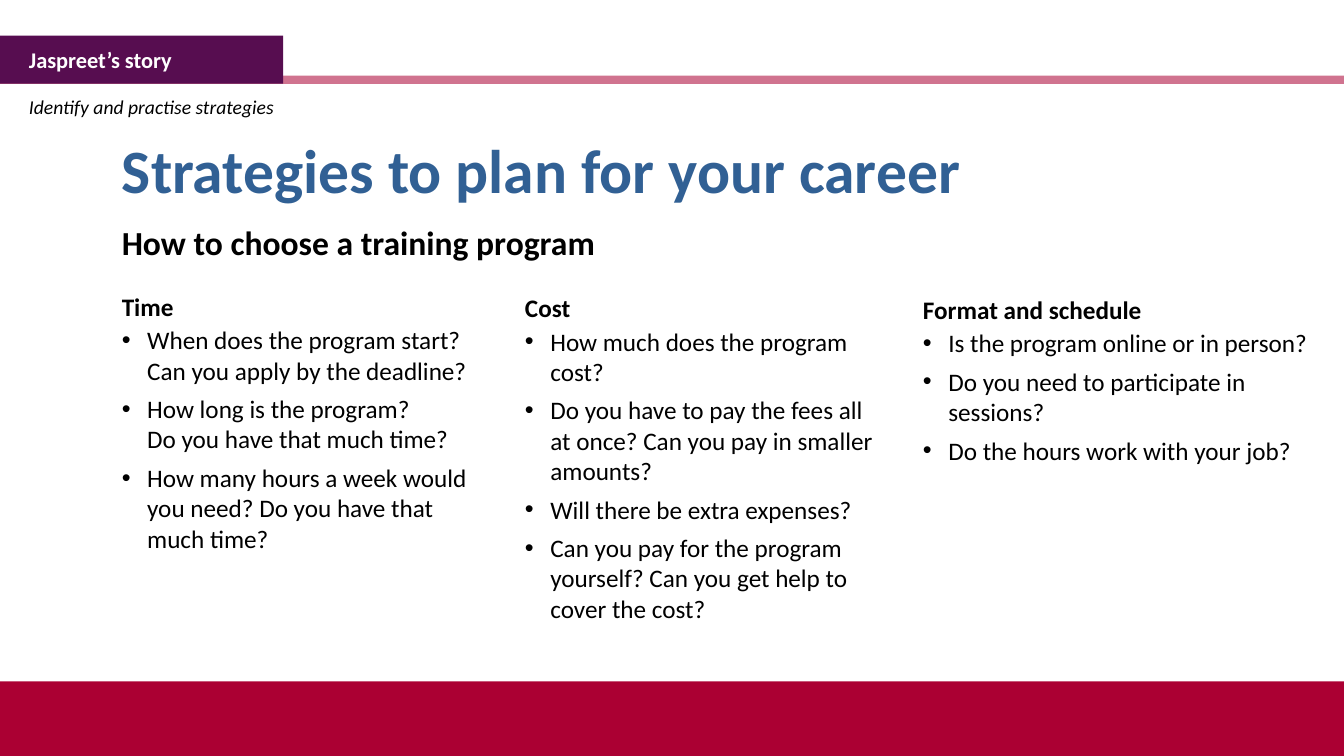
from lxml import etree
from pptx import Presentation
from pptx.dml.color import RGBColor
from pptx.enum.shapes import MSO_CONNECTOR, MSO_SHAPE
from pptx.enum.text import MSO_ANCHOR, MSO_AUTO_SIZE, PP_ALIGN
from pptx.oxml.ns import qn
from pptx.util import Cm, Pt

RECT = MSO_SHAPE.RECTANGLE
STRAIGHT = MSO_CONNECTOR.STRAIGHT
LEFT = PP_ALIGN.LEFT
TOP, MIDDLE = MSO_ANCHOR.TOP, MSO_ANCHOR.MIDDLE
GROW = MSO_AUTO_SIZE.SHAPE_TO_FIT_TEXT

WIDTH, HEIGHT = 33.87, 19.05
MARGIN = 2.82


def rgb(value):
    """Turn a hex string into a colour."""
    return RGBColor.from_string(value)


class Deck:
    """Holds the style and the current slide."""

    FONT = "Calibri"
    BLACK, WHITE = "000000", "FFFFFF"
    BLUE, CRIMSON, PURPLE = "316094", "AB0033", "570D50"

    def __init__(self, prs):
        """Add a title-only slide."""
        self.s = prs.slides.add_slide(prs.slide_layouts[5])

    def style(self, p, size, color=BLACK, bold=False, italic=False):
        """Format every run of a paragraph."""
        p.alignment = LEFT
        for r in p.runs:
            f = r.font
            f.name, f.size, f.bold, f.italic = self.FONT, Pt(size), bold, italic
            f.color.rgb = rgb(color)

    def indent(self, p, left, first=0):
        """Set the left margin and first-line indent of a paragraph."""
        pPr = p._p.get_or_add_pPr()
        pPr.set("marL", str(Cm(left)))
        pPr.set("indent", str(Cm(first)))
        return pPr

    def title(self, text, x, y, w, h):
        """Fill and place the title placeholder."""
        sp = self.s.shapes.title
        sp.left, sp.top, sp.width, sp.height = Cm(x), Cm(y), Cm(w), Cm(h)
        tf = sp.text_frame
        tf.text = text
        tf.vertical_anchor = TOP
        tf.auto_size = GROW
        self.style(tf.paragraphs[0], 44, self.BLUE, bold=True)

    def bar(self, x, y, w, h, color):
        """Draw a plain filled rectangle."""
        sp = self.s.shapes.add_shape(RECT, Cm(x), Cm(y), Cm(w), Cm(h))
        sp.shadow.inherit = False
        sp.fill.solid()
        sp.fill.fore_color.rgb = rgb(color)
        sp.line.fill.background()
        return sp

    def tab(self, text, x, y, w, h):
        """Draw the section tab with its label."""
        tf = self.bar(x, y, w, h, self.PURPLE).text_frame
        tf.text = text
        tf.vertical_anchor = MIDDLE
        p = tf.paragraphs[0]
        self.indent(p, 0.48)
        self.style(p, 16, self.WHITE, bold=True)

    def rule(self, y, width, color, alpha):
        """Draw a translucent line across the slide."""
        line = self.s.shapes.add_connector(STRAIGHT, 0, Cm(y), Cm(WIDTH), Cm(y))
        line.line.width = Pt(width)
        line.line.color.rgb = rgb(color)
        spPr = line._element.spPr
        clr = spPr.find(".//" + qn("a:srgbClr"))
        etree.SubElement(clr, qn("a:alpha")).set("val", str(alpha * 1000))
        etree.SubElement(spPr, qn("a:effectLst"))

    def text(self, text, x, y, w, h, size, **look):
        """Add a one-paragraph text box and return its frame."""
        tf = self.s.shapes.add_textbox(Cm(x), Cm(y), Cm(w), Cm(h)).text_frame
        tf.word_wrap = True
        tf.auto_size = GROW
        tf.text = text
        self.style(tf.paragraphs[0], size, **look)
        return tf

    def column(self, heading, items, x, y, w, h):
        """Add a heading with a bulleted list below."""
        tf = self.text(heading, x, y, w, h, 18, bold=True)
        tf.paragraphs[0].line_spacing = 1.15
        tf.paragraphs[0].space_after = Pt(2)
        for item in items:
            p = tf.add_paragraph()
            p.text = item
            pPr = self.indent(p, 0.64, -0.64)
            etree.SubElement(pPr, qn("a:buFont")).set("typeface", "Arial")
            etree.SubElement(pPr, qn("a:buChar")).set("char", "•")
            p.space_after = Pt(6)
            self.style(p, 18)


COLUMNS = [
    ("Time", [
        "When does the program start? Can you apply by the deadline?",
        "How long is the program? \vDo you have that much time?",
        "How many hours a week would you need? Do you have that much time?",
    ], (MARGIN, 7.11, 9.6, 7.04)),
    ("Cost", [
        "How much does the program cost?",
        "Do you have to pay the fees all \vat once? Can you pay in smaller amounts?",
        "Will there be extra expenses?",
        "Can you pay for the program yourself? Can you get help to cover the cost?",
    ], (12.98, 7.14, 9.88, 9.75)),
    ("Format and schedule", [
        "Is the program online or in person?",
        "Do you need to participate in sessions?",
        "Do the hours work with your job?",
    ], (23.01, 7.18, 10.49, 5.69)),
]


def main():
    """Build the slide and save it."""
    prs = Presentation()
    prs.slide_width, prs.slide_height = Cm(WIDTH), Cm(HEIGHT)
    deck = Deck(prs)
    deck.title("Strategies to plan for your career", MARGIN, 3.2, 29.62, 2.13)
    tf = deck.text("How to choose a training program", MARGIN, 5.31, 14.02, 1.42,
                   24, bold=True)
    tf.paragraphs[0].line_spacing = 1.15
    deck.bar(0, 17.17, WIDTH, HEIGHT - 17.17, deck.CRIMSON)
    deck.rule(2.01, 6, deck.CRIMSON, 55)
    deck.tab("Jaspreet’s story", 0, 0.9, 7.14, 1.21)
    deck.text("Identify and practise strategies", 0.48, 2.26, 14.48, 1.63,
              14, italic=True)
    for heading, items, box in COLUMNS:
        deck.column(heading, items, *box)
    prs.save("out.pptx")


if __name__ == "__main__":
    main()
